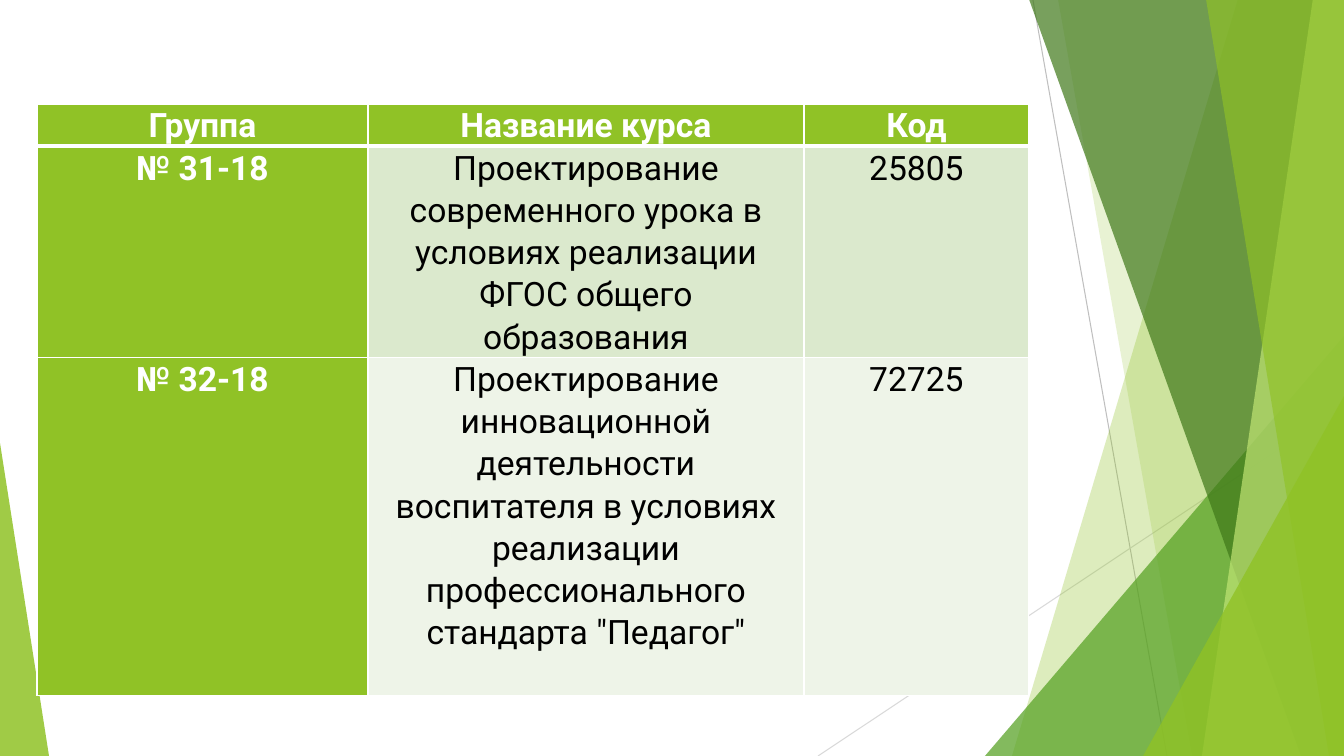
from lxml import etree
from pptx import Presentation
from pptx import util as u
from pptx.dml.color import RGBColor
from pptx.enum import shapes, text
from pptx.oxml import ns

WHITE = RGBColor(0xFF, 0xFF, 0xFF)
BLACK = RGBColor(0x00, 0x00, 0x00)
GREY = RGBColor(0xBF, 0xBF, 0xBF)
PALE = RGBColor(0xD9, 0xD9, 0xD9)
LIME = RGBColor(0x90, 0xC2, 0x26)
GREEN = RGBColor(0x54, 0xA0, 0x21)
DARK = RGBColor(0x3F, 0x78, 0x19)
LIGHT = RGBColor(0xC0, 0xE4, 0x74)
BANDS = [RGBColor(0xDB, 0xE9, 0xCD), RGBColor(0xEE, 0xF4, 0xE8)]

ROWS = [
    ("Группа", "Название курса", "Код"),
    ("№ 31-18", "Проектирование современного урока в условиях реализации "
     "ФГОС общего образования", "25805"),
    ("№ 32-18", "Проектирование инновационной деятельности воспитателя в условиях "
     "реализации профессионального стандарта \"Педагог\"", "72725"),
]
LEFT, TOP = 37, 104
WIDTHS = [331, 436, 225]
HEIGHTS = [42, 211, 338]

WIDE, HIGH = 1344, 756
RAYS = [
    (1033, 0, 1167, 756, GREY),
    (1344, 406, 818, 756, PALE),
]
FACETS = [
    ("band", (1238, 1012), LIME, 30),
    ("band", (1058, 1192), LIME, 20),
    ("wedge", (985, 336, 359, 1), GREEN, 72),
    ("band", (1029, 1301), DARK, 70),
    ("band", (1313, 1202), LIGHT, 70),
    ("band", (1206, 1329), LIME, 65),
    ("wedge", (1143, 396, 201, 1), LIME, 80),
    ("wedge", (0, 443, 49, 0), LIME, 85),
]
SCALE = 914400 / 100.8


def px(n):
    return u.Emu(round(n * SCALE))


def tint(shape, color, alpha):
    shape.shadow.inherit = False
    shape.line.fill.background()
    shape.fill.solid()
    shape.fill.fore_color.rgb = color
    tone = shape.fill._xPr.find(".//" + ns.qn("a:srgbClr"))
    etree.SubElement(tone, ns.qn("a:alpha"), val=str(alpha * 1000))


def band(slide, head, foot):
    pen = slide.shapes.build_freeform(head, -1, scale=SCALE)
    pen.add_line_segments([(WIDE, -1), (WIDE, HIGH), (foot, HIGH)], close=True)
    return pen.convert_to_shape()


def wedge(slide, left, top, width, apex):
    shape = slide.shapes.add_shape(
        shapes.MSO_SHAPE.ISOSCELES_TRIANGLE,
        px(left), px(top), px(width), px(HIGH - top))
    shape.adjustments[0] = apex
    return shape


def ray(slide, x, y, end, floor, color):
    line = slide.shapes.add_connector(
        shapes.MSO_CONNECTOR.STRAIGHT, px(x), px(y), px(end), px(floor))
    line.line.color.rgb = color
    line.line.width = u.Pt(0.75)
    etree.SubElement(line._element.spPr, ns.qn("a:effectLst"))


def border(cell, **sides):
    props = cell._tc.get_or_add_tcPr()
    for side, width in sides.items():
        line = etree.SubElement(props, ns.qn("a:ln" + side), w=str(u.Pt(width)))
        fill = etree.SubElement(line, ns.qn("a:solidFill"))
        etree.SubElement(fill, ns.qn("a:srgbClr"), val=str(WHITE))


def write(frame, words, color=BLACK, bold=False, size=24, font="Roboto"):
    frame.word_wrap = True
    para = frame.paragraphs[0]
    para.alignment = text.PP_ALIGN.CENTER
    para.line_spacing = 1.07
    run = para.add_run()
    run.text = words
    run.font.name = font
    run.font.size = u.Pt(size)
    run.font.bold = bold
    run.font.color.rgb = color


def courses(slide):
    table = slide.shapes.add_table(
        len(ROWS), len(WIDTHS), px(LEFT), px(TOP),
        px(sum(WIDTHS)), px(sum(HEIGHTS))).table
    for col, width in zip(table.columns, WIDTHS):
        col.width = px(width)
    for row, height in zip(table.rows, HEIGHTS):
        row.height = px(height)
    for r, row in enumerate(ROWS):
        for c, words in enumerate(row):
            cell = table.cell(r, c)
            key = r == 0 or c == 0
            cell.margin_left = cell.margin_right = px(7)
            cell.margin_top = cell.margin_bottom = 0
            border(cell, L=1, R=1, T=3 if r == 1 else 1, B=3 if r == 0 else 1)
            cell.fill.solid()
            cell.fill.fore_color.rgb = LIME if key else BANDS[r - 1]
            write(cell.text_frame, words, color=WHITE if key else BLACK, bold=key)


def main():
    deck = Presentation()
    deck.slide_width, deck.slide_height = px(WIDE), px(HIGH)
    slide = deck.slides.add_slide(deck.slide_layouts[6])
    for spot in RAYS:
        ray(slide, *spot)
    draw = {"band": band, "wedge": wedge}
    for kind, spot, color, alpha in FACETS:
        tint(draw[kind](slide, *spot), color, alpha)
    courses(slide)
    deck.save("out.pptx")


if __name__ == "__main__":
    main()
